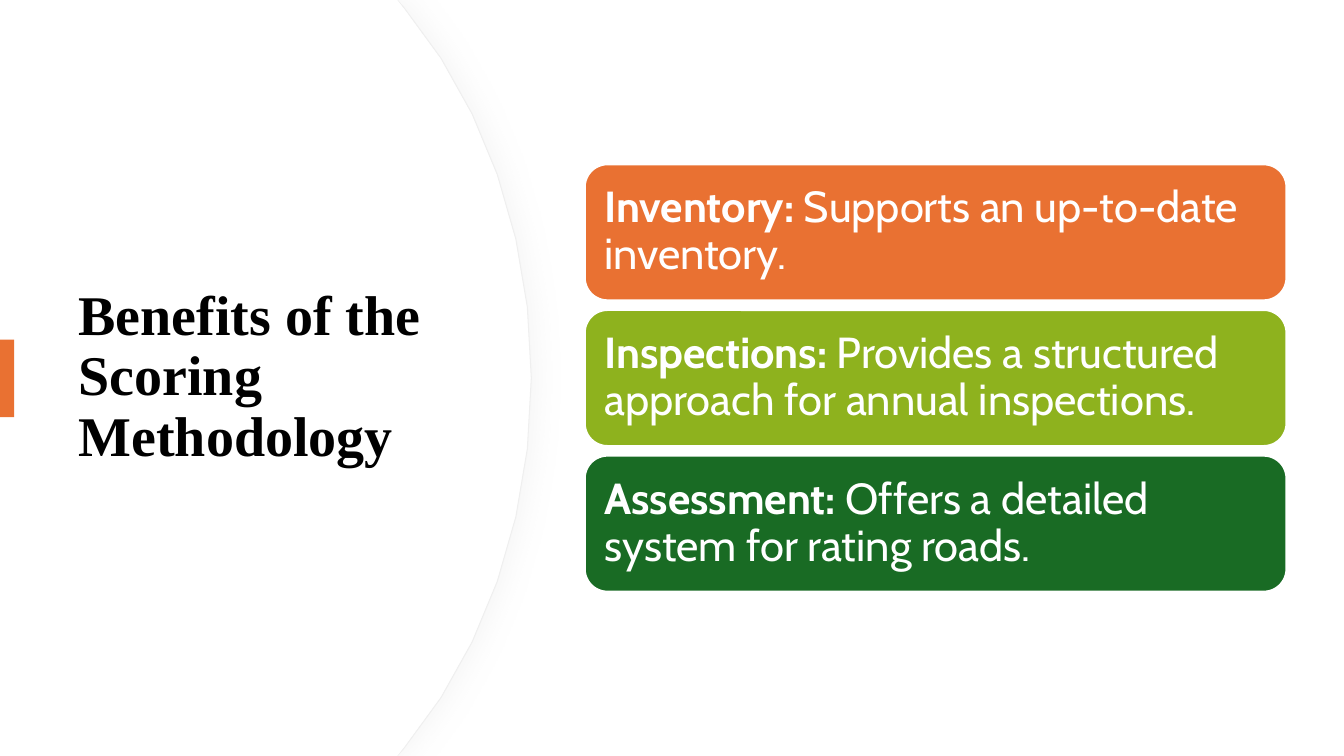
from dataclasses import dataclass

from lxml import etree
from pptx import Presentation
from pptx.dml.color import RGBColor
from pptx.enum.shapes import MSO_SHAPE
from pptx.enum.text import MSO_ANCHOR, MSO_AUTO_SIZE, PP_ALIGN
from pptx.oxml.ns import qn
from pptx.util import Inches, Pt

RECT, ROUNDED = MSO_SHAPE.RECTANGLE, MSO_SHAPE.ROUNDED_RECTANGLE
MIDDLE, LEFT = MSO_ANCHOR.MIDDLE, PP_ALIGN.LEFT
NO_AUTOFIT = MSO_AUTO_SIZE.NONE

# Content
TITLE = "Benefits of the Scoring Methodology"
BENEFITS = [
    ("Inventory:", " Supports an up-to-date inventory.", "E97132"),
    ("Inspections:", " Provides a structured approach for annual inspections.", "8EB21E"),
    ("Assessment:", " Offers a detailed system for rating roads.", "196B24"),
]


@dataclass(frozen=True)
class Theme:
    title_font: str = "Times New Roman"
    body_font: str = "Cabin"
    title_size: int = 40
    body_size: int = 31
    ink: str = "000000"
    paper: str = "FFFFFF"
    accent: str = "E97132"
    edge: str = "EFEFEF"
    shadow: str = "D9D9D9"
    line_spacing: float = 0.9


THEME = Theme()

# Layout, in inches
WIDTH, HEIGHT = 13.33, 7.5
CARD_LEFT, CARD_WIDTH, CARD_HEIGHT = 5.8, 6.96, 1.35
CARD_GAP = 0.095
CARD_PITCH = CARD_HEIGHT + CARD_GAP
CARD_TOP = (HEIGHT - len(BENEFITS) * CARD_PITCH + CARD_GAP) / 2
CARD_INSET = 0.13
PANEL_RIGHT = 5.27
CURVE_STEPS = 6


def color(value):
    return RGBColor.from_string(value)


def paint(shape, fill, line=None, line_width=0):
    shape.shadow.inherit = False
    shape.fill.solid()
    shape.fill.fore_color.rgb = color(fill)
    if line:
        shape.line.color.rgb = color(line)
        shape.line.width = Pt(line_width)
    else:
        shape.line.fill.background()


def style_run(run, font, size, ink, bold):
    run.font.name = font
    run.font.size = Pt(size)
    run.font.color.rgb = color(ink)
    run.font.bold = bold


def bezier(start, control_a, control_b, end):
    """Points along a cubic curve, after its start."""
    for step in range(1, CURVE_STEPS + 1):
        t = step / CURVE_STEPS
        u = 1 - t
        yield tuple(
            u**3 * a + 3 * u * u * t * b + 3 * u * t * t * c + t**3 * d
            for a, b, c, d in zip(start, control_a, control_b, end)
        )


def add_panel(shapes, right):
    """White panel whose right edge bulges, mirrored about mid-height."""
    shoulder = (right - 1.26, 0.08)
    upper = [(3.94, 0), shoulder]
    upper += bezier(shoulder, (right - 0.48, 1.02), (right, 2.32), (right, HEIGHT / 2))
    lower = [(x, HEIGHT - y) for x, y in reversed(upper[:-1])]
    outline = [(Inches(x), Inches(y)) for x, y in upper + lower + [(0, HEIGHT)]]
    builder = shapes.build_freeform(0, 0)
    builder.add_line_segments(outline, close=True)
    return builder.convert_to_shape()


def add_soft_shadow(shape):
    effects = shape.element.spPr.find(qn("a:effectLst"))
    outer = etree.SubElement(effects, qn("a:outerShdw"), blurRad=str(Pt(20)),
                             dist=str(Pt(3)), dir="0", algn="l", rotWithShape="0")
    tint = etree.SubElement(outer, qn("a:srgbClr"), val=THEME.shadow)
    etree.SubElement(tint, qn("a:alpha"), val="25000")


def add_title(slide):
    title = slide.shapes.title
    # Bring the title in front of the panels
    title.element.getparent().append(title.element)
    title.left, title.top = Inches(0.68), Inches(1.27)
    title.width, title.height = Inches(3.94), Inches(4.95)
    frame = title.text_frame
    frame.text = TITLE
    frame.word_wrap = True
    frame.auto_size = NO_AUTOFIT
    frame.vertical_anchor = MIDDLE
    heading = frame.paragraphs[0]
    heading.alignment = LEFT
    heading.line_spacing = THEME.line_spacing
    style_run(heading.runs[0], THEME.title_font, THEME.title_size, THEME.ink, True)


def add_card(shapes, row, label, detail, fill):
    card = shapes.add_shape(ROUNDED, Inches(CARD_LEFT), Inches(CARD_TOP + row * CARD_PITCH),
                            Inches(CARD_WIDTH), Inches(CARD_HEIGHT))
    paint(card, fill, THEME.paper, 1.5)
    frame = card.text_frame
    frame.word_wrap = True
    frame.vertical_anchor = MIDDLE
    frame.margin_left = frame.margin_right = Inches(CARD_INSET)
    frame.margin_top = frame.margin_bottom = Inches(CARD_INSET)
    benefit = frame.paragraphs[0]
    benefit.alignment = LEFT
    benefit.line_spacing = THEME.line_spacing
    for text, bold in ((label, True), (detail, False)):
        run = benefit.add_run()
        run.text = text
        style_run(run, THEME.body_font, THEME.body_size, THEME.paper, bold)


def main():
    deck = Presentation()
    deck.slide_width, deck.slide_height = Inches(WIDTH), Inches(HEIGHT)
    slide = deck.slides.add_slide(deck.slide_layouts[5])
    shapes = slide.shapes

    # Curved panel: shadowed edge, then clean face
    edge = add_panel(shapes, PANEL_RIGHT)
    paint(edge, THEME.paper, THEME.edge, 0.75)
    add_soft_shadow(edge)
    paint(add_panel(shapes, PANEL_RIGHT - 0.01), THEME.paper)

    # Title and accent tab
    add_title(slide)
    tab = shapes.add_shape(RECT, 0, Inches(3.37), Inches(0.14), Inches(0.77))
    paint(tab, THEME.accent)

    # Benefit cards
    for row, (label, detail, fill) in enumerate(BENEFITS):
        add_card(shapes, row, label, detail, fill)

    deck.save("out.pptx")


if __name__ == "__main__":
    main()
